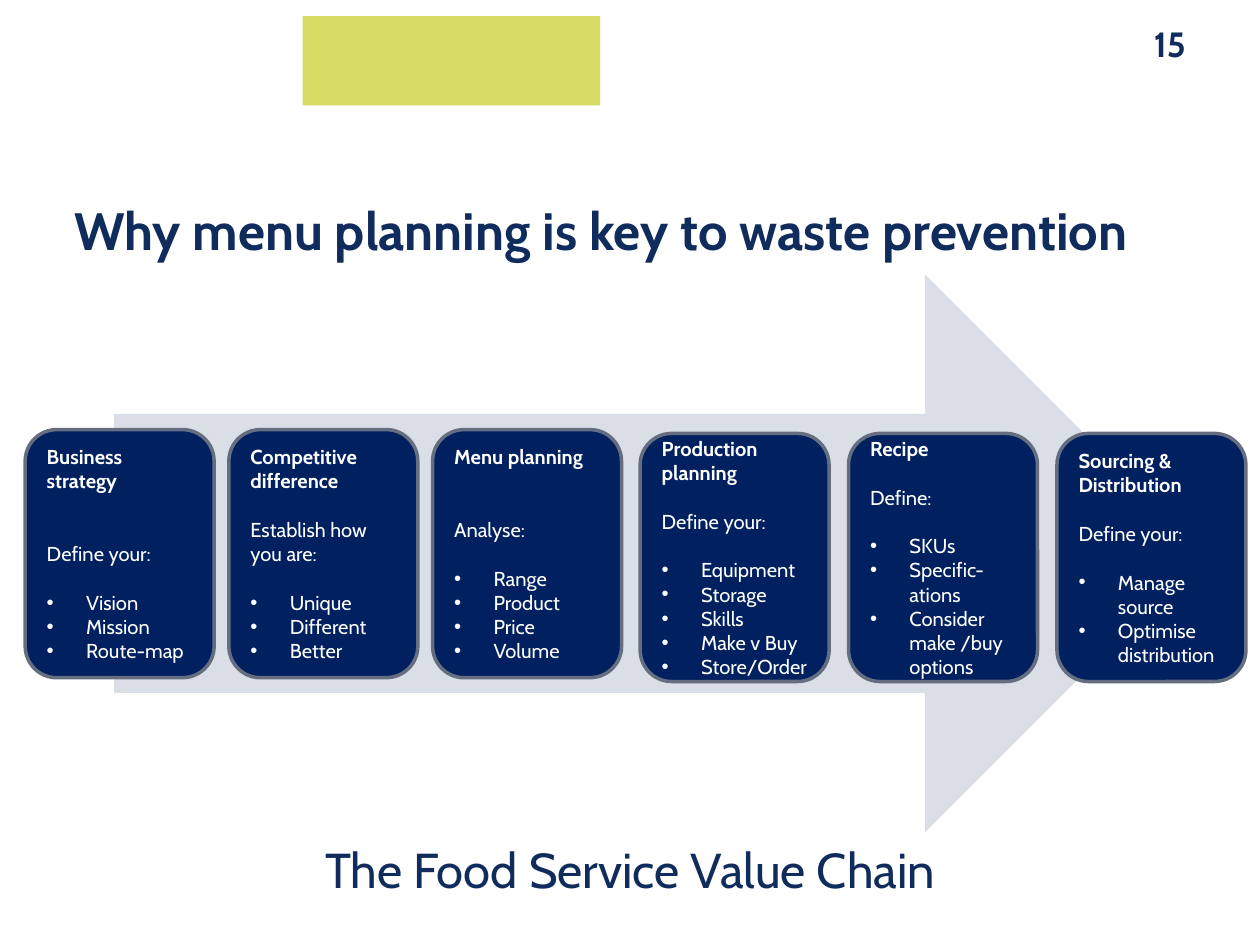
import copy
from dataclasses import dataclass

import pptx
import pptx.dml.color
import pptx.enum.shapes
import pptx.enum.text
import pptx.util
from lxml import etree
from pptx.oxml.ns import qn

Pt = pptx.util.Pt
SHAPES = pptx.enum.shapes.MSO_SHAPE
ALIGN = pptx.enum.text.PP_ALIGN
ANCHOR = pptx.enum.text.MSO_ANCHOR

FONT = "Cabin"
NAVY, CARD_NAVY, SLATE = "0F2C5C", "002060", "646E80"
WHITE, LIME, ARROW_BLUE = "FFFFFF", "D5DB63", "8795AD"
CARD_WIDTH, CARD_HEIGHT = 108, 141.8
CARD_TEXT_SIZE, LINE_HEIGHT, BULLET_INDENT = 11.5, 14, 22.5


@dataclass
class Stage:
    heading: str
    prompt: str
    bullets: list[str]
    prompt_gap: int = 1  # lines left free above the prompt


@dataclass
class StageGroup:
    left: float
    top: float
    pitch: float
    stages: list[Stage]


GROUPS = [
    StageGroup(14.4, 245.5, 116.4, [
        Stage("Business strategy", "Define your:", ["Vision", "Mission", "Route-map"], 2),
        Stage("Competitive difference", "Establish how you are:",
              ["Unique", "Different", "Better"]),
        Stage("Menu planning", "Analyse:", ["Range", "Product", "Price", "Volume"], 2),
    ]),
    StageGroup(365.8, 247.7, 119.1, [
        Stage("Production planning", "Define your:",
              ["Equipment", "Storage", "Skills", "Make v Buy", "Store/Order"]),
        Stage("Recipe", "Define:", ["SKUs", "Specific-\vations", "Consider make /buy options"]),
        Stage("Sourcing & Distribution", "Define your:",
              ["Manage source", "Optimise distribution"]),
    ]),
]


def color(value: str) -> pptx.dml.color.RGBColor:
    return pptx.dml.color.RGBColor.from_string(value)


def write(paragraph, text: str, *, size: float, fill: str = NAVY, bold: bool = False,
          align=ALIGN.LEFT, space_before: float = 0, bullet: bool = False) -> None:
    if bullet:
        properties = paragraph._p.get_or_add_pPr()
        properties.set("marL", str(Pt(BULLET_INDENT)))
        properties.set("indent", str(-Pt(BULLET_INDENT)))
        etree.SubElement(properties, qn("a:buFont")).set("typeface", "Arial")
        etree.SubElement(properties, qn("a:buChar")).set("char", "•")
    paragraph.text = text
    paragraph.alignment = align
    paragraph.space_before = Pt(space_before)
    for run in paragraph.runs:
        run.font.name = FONT
        run.font.size = Pt(size)
        run.font.bold = bold
        run.font.color.rgb = color(fill)
    # Line breaks take the format of the text around them
    for line_break in paragraph._p.findall(qn("a:br")):
        line_break.append(copy.deepcopy(paragraph.runs[0]._r.rPr))


def add_text(slide, text: str, left: float, top: float, width: float, height: float,
             *, inset: bool = True, **text_format) -> None:
    shape = slide.shapes.add_textbox(Pt(left), Pt(top), Pt(width), Pt(height))
    frame = shape.text_frame
    frame.word_wrap = True
    if not inset:
        frame.margin_left = frame.margin_right = frame.margin_top = frame.margin_bottom = 0
    write(frame.paragraphs[0], text, **text_format)


def add_block(slide, kind, left: float, top: float, width: float, height: float, fill: str):
    shape = slide.shapes.add_shape(kind, Pt(left), Pt(top), Pt(width), Pt(height))
    shape.shadow.inherit = False
    shape.fill.solid()
    shape.fill.fore_color.rgb = color(fill)
    shape.line.fill.background()
    return shape


def add_stage(slide, stage: Stage, left: float, top: float) -> None:
    card = add_block(slide, SHAPES.ROUNDED_RECTANGLE, left, top,
                     CARD_WIDTH, CARD_HEIGHT, CARD_NAVY)
    card.line.color.rgb = color(SLATE)
    card.line.width = Pt(2)
    frame = card.text_frame
    frame.word_wrap = True
    frame.vertical_anchor = ANCHOR.MIDDLE
    style = {"size": CARD_TEXT_SIZE, "fill": WHITE}
    write(frame.paragraphs[0], stage.heading, bold=True, **style)
    write(frame.add_paragraph(), stage.prompt,
          space_before=stage.prompt_gap * LINE_HEIGHT, **style)
    for index, bullet in enumerate(stage.bullets):
        write(frame.add_paragraph(), bullet, bullet=True,
              space_before=0 if index else LINE_HEIGHT, **style)


def main() -> None:
    presentation = pptx.Presentation()
    presentation.slide_width, presentation.slide_height = Pt(720), Pt(540)
    slide = presentation.slides.add_slide(presentation.slide_layouts[6])
    slide.background.fill.solid()
    slide.background.fill.fore_color.rgb = color(WHITE)

    # Header and titles
    add_text(slide, "15", 652.3, 9.4, 67.7, 31.5, size=20, bold=True)
    add_block(slide, SHAPES.RECTANGLE, 173, 9.2, 170, 51, LIME)
    add_text(slide, "Why menu planning is key to waste prevention",
             42.5, 113, 655, 42, inset=False, size=30, bold=True)
    add_text(slide, "The Food Service Value Chain", 0, 476, 720, 41,
             size=28, align=ALIGN.CENTER)

    # Translucent arrow behind the stages
    arrow = add_block(slide, SHAPES.RIGHT_ARROW, 65.2, 156.8, 622.8, 318.8, ARROW_BLUE)
    fill_color = arrow._element.spPr.find(f"{qn('a:solidFill')}/{qn('a:srgbClr')}")
    etree.SubElement(fill_color, qn("a:alpha")).set("val", "30000")

    # Value chain stages
    for group in GROUPS:
        for index, stage in enumerate(group.stages):
            add_stage(slide, stage, group.left + index * group.pitch, group.top)

    presentation.save("out.pptx")


if __name__ == "__main__":
    main()
